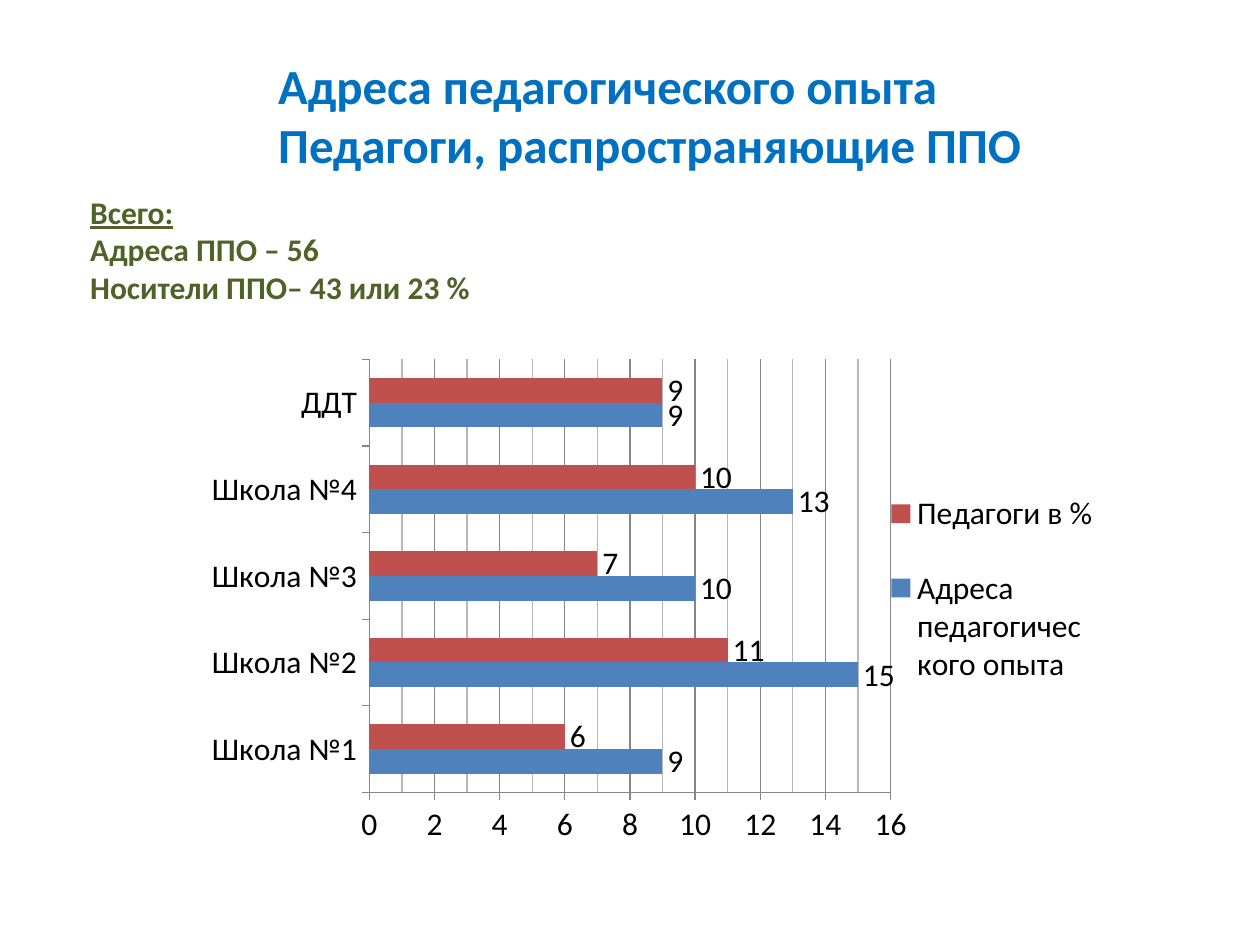
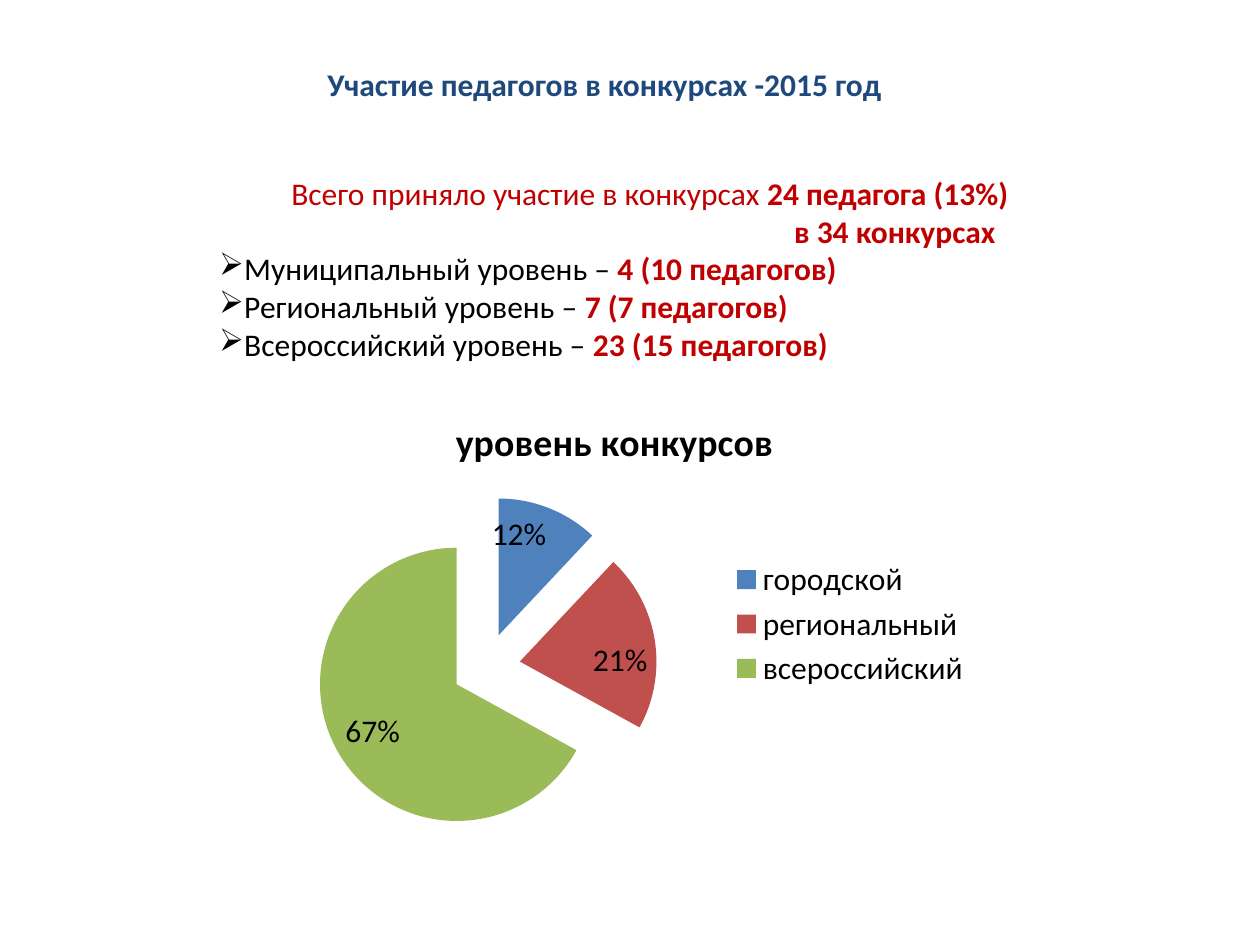
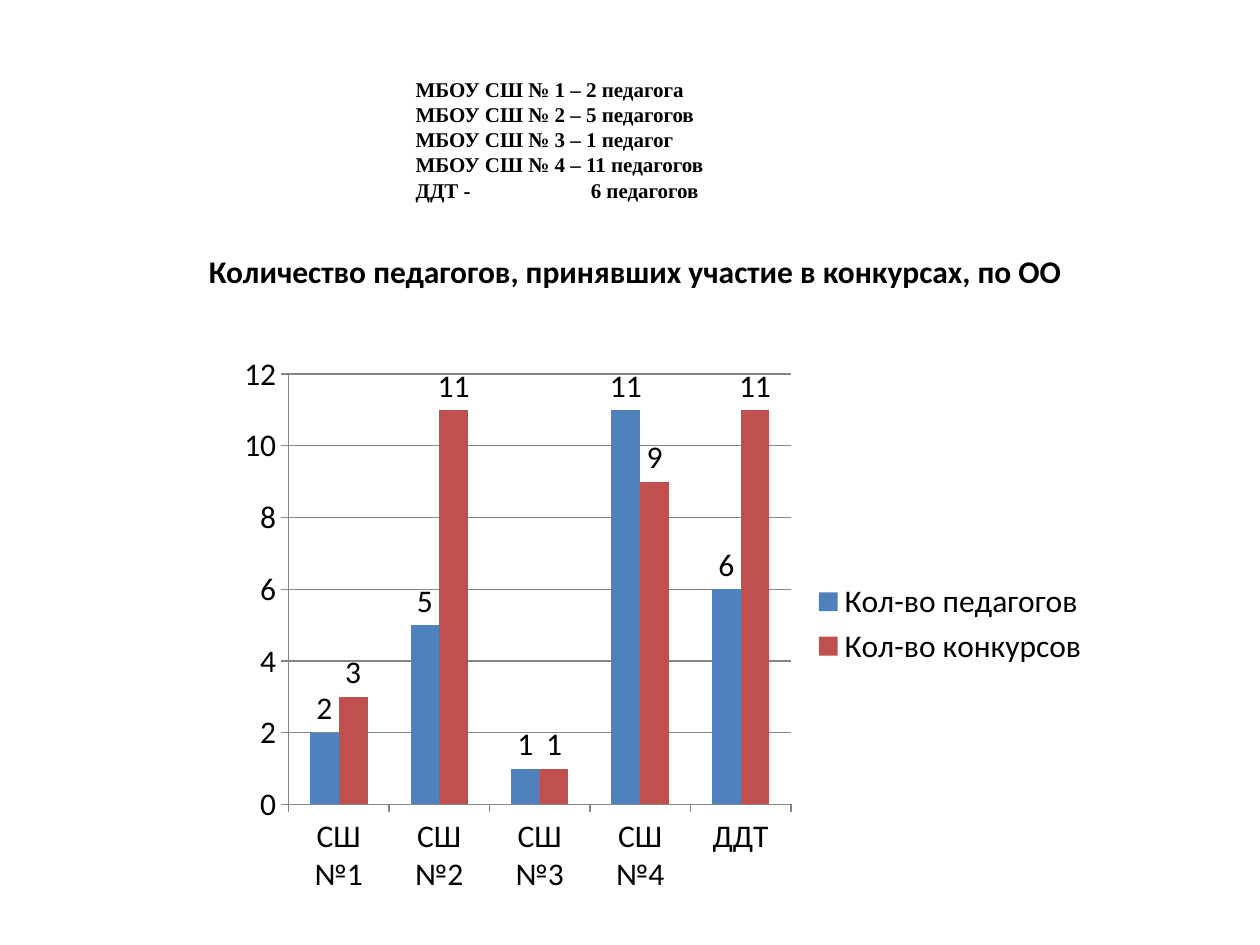
"""Build three slides on teachers' experience and contests."""
from dataclasses import dataclass

from lxml import etree
from pptx import Presentation
from pptx.chart.data import CategoryChartData
from pptx.dml.color import RGBColor
from pptx.enum.chart import XL_CHART_TYPE, XL_LABEL_POSITION, XL_LEGEND_POSITION, XL_TICK_MARK
from pptx.enum.text import MSO_ANCHOR, MSO_AUTO_SIZE, PP_ALIGN
from pptx.oxml.ns import qn
from pptx.util import Cm, Pt

BAR = XL_CHART_TYPE.BAR_CLUSTERED
COLUMN = XL_CHART_TYPE.COLUMN_CLUSTERED
PIE = XL_CHART_TYPE.PIE
OUT_END = XL_LABEL_POSITION.OUTSIDE_END
IN_END = XL_LABEL_POSITION.INSIDE_END
RIGHT = XL_LEGEND_POSITION.RIGHT
OUTSIDE = XL_TICK_MARK.OUTSIDE
MIDDLE = MSO_ANCHOR.MIDDLE
TOP = MSO_ANCHOR.TOP
FIT = MSO_AUTO_SIZE.SHAPE_TO_FIT_TEXT
CENTER = PP_ALIGN.CENTER
JUSTIFY = PP_ALIGN.JUSTIFY


@dataclass(frozen=True)
class Theme:
    font: str = "Calibri"
    serif: str = "Times New Roman"
    black: str = "000000"
    blue: str = "0070C0"
    navy: str = "1F497D"
    olive: str = "4F6228"
    red: str = "C00000"
    grid: str = "868686"
    faint: str = "B7B7B7"
    fills: tuple = ("4F81BD", "C0504D", "9BBB59")
    big: float = 28
    head: float = 21.6
    body: float = 18
    small: float = 12
    thin: float = 0.75


T = Theme()

TITLE = ["Адреса педагогического опыта", "Педагоги, распространяющие ППО"]
TOTAL = ["Адреса ППО – 56", "Носители ППО– 43 или 23 %"]
CONTEST = "Участие педагогов в конкурсах -2015 год"
LEVELS = [
    ("Муниципальный уровень – ", "4 (10 педагогов)"),
    ("Региональный уровень – ", "7 (7 педагогов)"),
    ("Всероссийский уровень – ", "23 (15 педагогов)"),
]
SCHOOLS = [
    "МБОУ СШ № 1 – 2 педагога",
    "МБОУ СШ № 2 – 5 педагогов",
    "МБОУ СШ № 3 – 1 педагог",
    "МБОУ СШ № 4 – 11 педагогов",
    "ДДТ -\t6 педагогов",
]
COUNT = "Количество педагогов, принявших участие в конкурсах, по ОО"

SPREAD = (
    ["Школа №1", "Школа №2", "Школа №3", "Школа №4", "ДДТ"],
    {"Адреса педагогического опыта": (9, 15, 10, 13, 9), "Педагоги в %": (6, 11, 7, 10, 9)},
)
SHARE = (
    ["городской", "региональный", "всероссийский"],
    {"уровень конкурсов": (0.12, 0.21, 0.67)},
)
ENTRIES = (
    ["СШ №1", "СШ №2", "СШ №3", "СШ №4", "ДДТ"],
    {"Кол-во педагогов": (2, 5, 1, 11, 6), "Кол-во конкурсов": (3, 11, 1, 9, 11)},
)


def style(font, color, size, bold=False, line=False, name=T.font):
    font.name = name
    font.size = Pt(size)
    font.bold = bold
    font.underline = line
    font.color.rgb = RGBColor.from_string(color)


def add_run(para, text, color, size=T.body, **look):
    run = para.add_run()
    run.text = text
    style(run.font, color, size, **look)


def add_box(slide, place, count, wrap=False, anchor=TOP):
    frame = slide.shapes.add_textbox(*map(Cm, place)).text_frame
    frame.word_wrap = wrap
    frame.auto_size = FIT
    frame.vertical_anchor = anchor
    for _ in range(count - 1):
        frame.add_paragraph()
    return frame.paragraphs


def add_lines(slide, place, lines, color, size=T.body):
    for para, text in zip(add_box(slide, place, len(lines)), lines):
        add_run(para, text, color, size, bold=True)


def set_line(target):
    target.format.line.color.rgb = RGBColor.from_string(T.grid)
    target.format.line.width = Pt(T.thin)


def set_minor(axis):
    axis.minor_unit = 1
    axis.has_minor_gridlines = True
    node = axis._element.find(qn("c:minorGridlines"))
    line = etree.SubElement(etree.SubElement(node, qn("c:spPr")), qn("a:ln"))
    line.set("w", str(Pt(T.thin)))
    fill = etree.SubElement(line, qn("a:solidFill"))
    etree.SubElement(fill, qn("a:srgbClr")).set("val", T.faint)


def set_place(owner, inner, box):
    old = owner.find(qn("c:layout"))
    if old is not None:
        owner.remove(old)
    layout = etree.Element(qn("c:layout"))
    manual = etree.SubElement(layout, qn("c:manualLayout"))
    pairs = [("layoutTarget", "inner")] if inner else []
    pairs += [("xMode", "edge"), ("yMode", "edge"), *zip("xywh", box)]
    for tag, value in pairs:
        etree.SubElement(manual, qn("c:" + tag)).set("val", str(value))
    owner.insert(0 if inner else 1, layout)


def add_chart(slide, kind, place, source, form="General"):
    names, series = source
    data = CategoryChartData(number_format=form)
    data.categories = names
    for name, values in series.items():
        data.add_series(name, values)
    chart = slide.shapes.add_chart(kind, *map(Cm, place), data).chart
    style(chart.font, T.black, T.body)
    chart.has_title = kind == PIE
    chart.has_legend = True
    chart.legend.position = RIGHT
    chart.legend.include_in_layout = False
    plot = chart.plots[0]
    plot.vary_by_categories = kind == PIE
    plot.has_data_labels = True
    labels = plot.data_labels
    labels.show_value = True
    labels.show_percentage = False
    labels.number_format = form
    labels.number_format_is_linked = False
    labels.position = IN_END if kind == PIE else OUT_END
    return chart


def add_bars(slide, kind, place, source, top):
    chart = add_chart(slide, kind, place, source)
    plot = chart.plots[0]
    plot.gap_width = 150
    for item, color in zip(plot.series, T.fills):
        item.format.fill.solid()
        item.format.fill.fore_color.rgb = RGBColor.from_string(color)
    for axis in (chart.category_axis, chart.value_axis):
        axis.major_tick_mark = OUTSIDE
        set_line(axis)
    axis = chart.value_axis
    axis.minimum_scale, axis.maximum_scale, axis.major_unit = 0, top, 2
    axis.has_major_gridlines = True
    set_line(axis.major_gridlines)
    return chart


def add_pie(slide, place, source):
    chart = add_chart(slide, PIE, place, source, "0%")
    para = chart.chart_title.text_frame.paragraphs[0]
    add_run(para, *source[1], T.black, T.head, bold=True)
    item = chart.plots[0].series[0]
    for spot, color in enumerate(T.fills):
        fill = item.points[spot].format.fill
        fill.solid()
        fill.fore_color.rgb = RGBColor.from_string(color)
    burst = etree.Element(qn("c:explosion"))
    burst.set("val", "25")
    item._element.find(qn("c:tx")).addnext(burst)


def draw_spread(slide):
    chart = add_bars(slide, BAR, (2.97, 6.93, 19.46, 10.52), SPREAD, 16)
    set_minor(chart.value_axis)
    set_place(chart._chartSpace.chart.plotArea, True, (0.23, 0.03, 0.54, 0.83))
    set_place(chart.legend._element, False, (0.77, 0.22, 0.21, 0.5))
    add_lines(slide, (5.36, 0.99, 15.65, 3.84), TITLE, T.blue, T.big)
    first, *rest = add_box(slide, (1.57, 3.76, 8.26, 2.57), 1 + len(TOTAL))
    add_run(first, "Всего:", T.olive, bold=True, line=True)
    for para, text in zip(rest, TOTAL):
        add_run(para, text, T.olive, bold=True)


def draw_share(slide):
    add_lines(slide, (6.35, 1.19, 11.76, 1.02), [CONTEST], T.navy)
    place = (4.17, 3.38, 17.86, 4.11)
    first, second, *rest = add_box(slide, place, 2 + len(LEVELS), wrap=True)
    first.alignment = second.alignment = CENTER
    add_run(first, "Всего приняло участие в конкурсах ", T.red)
    add_run(first, "24 педагога (13%)", T.red, bold=True)
    second._p.get_or_add_pPr().set("marL", str(Cm(9.88)))
    add_run(second, "в 34 конкурсах", T.red, bold=True)
    for para, (label, score) in zip(rest, LEVELS):
        props = para._p.get_or_add_pPr()
        props.set("marL", str(Cm(0.5)))
        props.set("indent", str(-Cm(0.5)))
        etree.SubElement(props, qn("a:buChar")).set("char", "➢")
        add_run(para, label, T.black)
        add_run(para, score, T.red, bold=True)
    add_pie(slide, (4.95, 7.92, 14.88, 9.32), SHARE)


def draw_count(slide):
    add_bars(slide, COLUMN, (4.57, 6.93, 17.65, 11.3), ENTRIES, 12)
    add_lines(slide, (3.96, 4.95, 17.83, 1.02), [COUNT], T.black)
    place = (8.13, 1.4, 6.93, 2.82)
    for para, text in zip(add_box(slide, place, len(SCHOOLS), True, MIDDLE), SCHOOLS):
        para.alignment = JUSTIFY
        if "\t" in text:
            tabs = etree.SubElement(para._p.get_or_add_pPr(), qn("a:tabLst"))
            stop = etree.SubElement(tabs, qn("a:tab"))
            stop.set("pos", str(Cm(3.53)))
            stop.set("algn", "l")
        add_run(para, text, T.black, T.small, bold=True, name=T.serif)


def main():
    deck = Presentation()
    deck.slide_width, deck.slide_height = Cm(25.4), Cm(19.05)
    for draw in (draw_spread, draw_share, draw_count):
        draw(deck.slides.add_slide(deck.slide_layouts[6]))
    deck.save("out.pptx")


if __name__ == "__main__":
    main()
